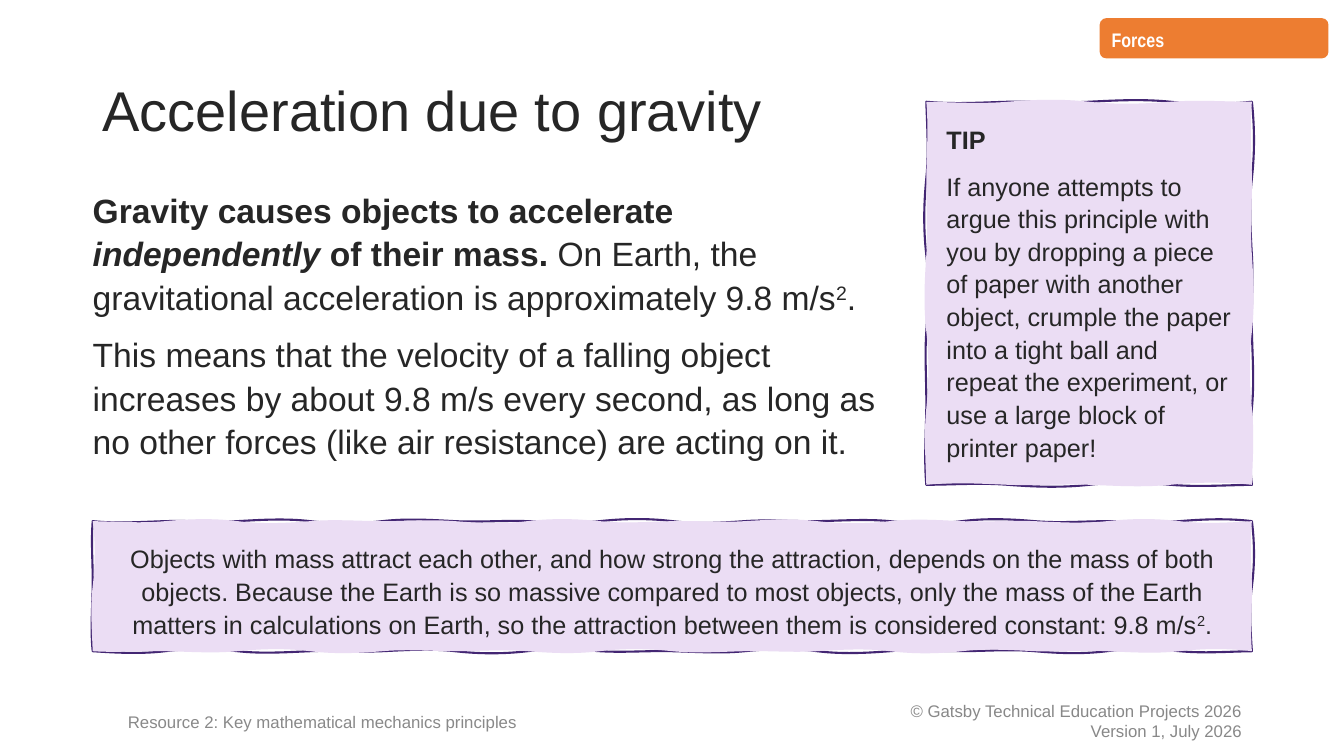
from math import hypot, sin
from lxml.etree import SubElement as sub
from pptx import Presentation
from pptx.dml.color import RGBColor
from pptx.enum.shapes import MSO_SHAPE as Kind
from pptx.enum.text import MSO_ANCHOR as Anchor, PP_ALIGN as Align
from pptx.oxml.ns import qn
from pptx.util import Inches, Pt

hues = {"ink": "262626", "lilac": "EBDDF4", "purple": "432673", "orange": "ED7D31",
        "white": "FFFFFF", "note": "888888", "foot": "898989"}

deck = Presentation()
deck.slide_width, deck.slide_height = Inches(40 / 3), Inches(7.5)
slide = deck.slides.add_slide(deck.slide_layouts[6])
shapes = slide.shapes


def write(shape, paras, size, hue="ink", face="Arial", align=Align.LEFT,
          anchor=Anchor.TOP, pad=(0.1, 0.05), lead=1.08, gap=10):
    frame = shape.text_frame
    frame.word_wrap = True
    frame.vertical_anchor = anchor
    frame.margin_left = frame.margin_right = Inches(pad[0])
    frame.margin_top = frame.margin_bottom = Inches(pad[1])
    for num, runs in enumerate(paras):
        para = frame.add_paragraph() if num else frame.paragraphs[0]
        para.alignment = align
        para.line_spacing = lead
        para.space_before = Pt(gap if num else 0)
        font = para.font
        font.name, font.size = face, Pt(size)
        font.color.rgb = RGBColor.from_string(hues[hue])
        for text, style in runs:
            run = para.add_run()
            run.text = text
            if "b" in style:
                run.font.bold = True
            if "i" in style:
                run.font.italic = True
            if "^" in style:
                run._r.get_or_add_rPr().set("baseline", "30000")


def sketch(paths, width, height, seed, **look):
    path = sub(paths, qn("a:path"), w=str(Inches(width)), h=str(Inches(height)), **look)
    ends = [(0, 0), (width, 0), (width, height), (0, height), (0, 0)]
    sub(sub(path, qn("a:moveTo")), qn("a:pt"), x="0", y="0")
    for side, ((x1, y1), (x2, y2)) in enumerate(zip(ends, ends[1:])):
        steps = round(hypot(x2 - x1, y2 - y1) / 0.72)
        for step in range(steps):
            curve = sub(path, qn("a:cubicBezTo"))
            for third in (1, 2, 3):
                part = (step + third / 3) / steps
                knot = step + (third > 1)
                sway = (0.03, -0.03, 0)[third - 1] * sin(2.4 * knot + seed + side)
                x = x1 + part * (x2 - x1) + sway * (side % 2)
                y = y1 + part * (y2 - y1) + sway * (1 - side % 2)
                sub(curve, qn("a:pt"), x=str(Inches(x)), y=str(Inches(y)))
    sub(path, qn("a:close"))


note = shapes.add_textbox(Inches(7.92), Inches(6.95), Inches(4.5), Inches(0.4))
write(note, [[("© Gatsby Technical Education Projects 2026", "")],
             [("Version 1, July 2026", "")]], 12, "note",
      align=Align.RIGHT, anchor=Anchor.MIDDLE, lead=1.0, gap=0)

title = shapes.add_textbox(Inches(0.92), Inches(0.4), Inches(11.5), Inches(1.45))
write(title, [[("Acceleration due to gravity", "")]], 40, anchor=Anchor.MIDDLE, lead=0.9)

body = shapes.add_shape(Kind.RECTANGLE, Inches(0.92), Inches(1.85), Inches(7.79), Inches(3.2))
body.shadow.inherit = False
body.fill.solid()
body.fill.fore_color.rgb = RGBColor.from_string(hues["white"])
body.line.fill.background()
write(body, [
    [("Gravity causes objects to accelerate ", "b"), ("independently", "bi"),
     (" of their mass.", "b"),
     (" On Earth, the gravitational acceleration is approximately 9.8 m/s", ""),
     ("2", "^"), (".", "")],
    [("This means that the velocity of a falling object increases by about 9.8 m/s every "
      "second, as long as no other forces (like air resistance) are acting on it.", "")],
], 24, pad=(0, 0))

fact = [[("Objects with mass attract each other, and how strong the attraction, depends on the "
          "mass of both objects. Because the Earth is so massive compared to most objects, only "
          "the mass of the Earth matters in calculations on Earth, so the attraction between "
          "them is considered constant: 9.8 m/s", ""), ("2", "^"), (".", "")]]
tip = [[("TIP", "b")],
       [("If anyone attempts to argue this principle with you by dropping a piece of paper with "
         "another object, crumple the paper into a tight ball and repeat the experiment, or use "
         "a large block of printer paper!", "")]]
for left, top, width, height, paras, align in [
        (0.92, 5.17, 11.5, 1.29, fact, Align.CENTER),
        (9.19, 1.01, 3.23, 3.8, tip, Align.LEFT)]:
    x1, y1, x2, y2 = map(Inches, (left, top, left + width, top + height))
    pen = shapes.build_freeform(x1, y1)
    pen.add_line_segments([(x2, y1), (x2, y2), (x1, y2)], close=True)
    panel = pen.convert_to_shape()
    paths = next(panel._element.iter(qn("a:pathLst")))
    paths.remove(paths[0])
    sketch(paths, width, height, 1, fill="none")
    sketch(paths, width, height, 3, stroke="0")
    panel.shadow.inherit = False
    panel.fill.solid()
    panel.fill.fore_color.rgb = RGBColor.from_string(hues["lilac"])
    panel.line.color.rgb = RGBColor.from_string(hues["purple"])
    panel.line.width = Pt(1.5)
    write(panel, paras, 18, align=align, pad=(0.2, 0.2))

foot = shapes.add_textbox(Inches(0.92), Inches(6.95), Inches(5.28), Inches(0.41))
write(foot, [[("Resource 2: Key mathematical mechanics principles", "")]], 12, "foot",
      anchor=Anchor.MIDDLE)
props = foot.text_frame.paragraphs[0]._p.get_or_add_pPr()
props.set("marL", str(Inches(0.5)))
props.set("indent", str(Inches(-0.25)))

tag = shapes.add_shape(Kind.FLOWCHART_ALTERNATE_PROCESS, Inches(10.91), Inches(0.18),
                       Inches(2.27), Inches(0.4))
tag.shadow.inherit = False
tag.fill.solid()
tag.fill.fore_color.rgb = RGBColor.from_string(hues["orange"])
tag.line.fill.background()
write(tag, [[("Forces", "b")]], 14, "white", "Arial Narrow", anchor=Anchor.MIDDLE)

deck.save("out.pptx")
